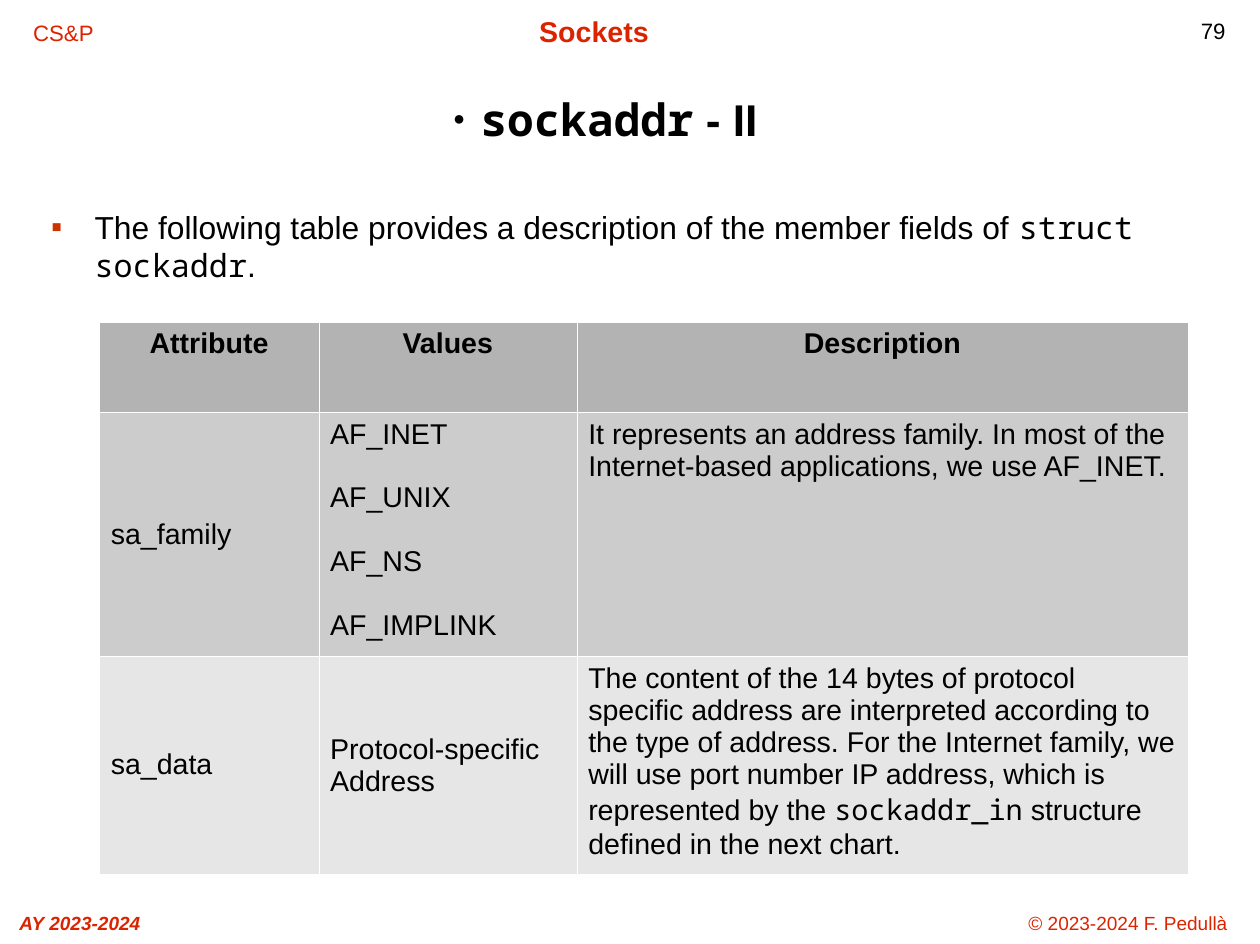
from lxml.etree import SubElement
from pptx import Presentation
from pptx.dml.color import RGBColor
from pptx.enum.text import MSO_ANCHOR as Anchor, PP_ALIGN as Align
from pptx.oxml.ns import qn
from pptx.util import Inches, Pt

SANS, MONO = "Arial", "Noto Sans Mono"
RED, BLACK, WHITE = "DC2300", "000000", "FFFFFF"


def color(value):
    return RGBColor.from_string(value)


class SlideBuilder:
    def __init__(self, slide):
        self.slide = slide

    def add_runs(self, p, runs, size, ink=BLACK, bold=False, italic=False, align=Align.LEFT):
        """Fill a paragraph from (text, font name) pairs."""
        p.alignment = align
        for text, name in runs:
            r = p.add_run()
            r.text = text
            font = r.font
            font.name, font.size, font.bold, font.italic = name, Pt(size), bold, italic
            font.color.rgb = color(ink)

    def bullet(self, p, char, indent, ink, percent=100):
        pPr = p._p.get_or_add_pPr()
        pPr.set("marL", str(Inches(indent)))
        pPr.set("indent", str(-Inches(indent)))
        SubElement(SubElement(pPr, qn("a:buClr")), qn("a:srgbClr"), val=ink)
        SubElement(pPr, qn("a:buSzPct"), val=str(percent * 1000))
        SubElement(pPr, qn("a:buFont"), typeface=SANS)
        SubElement(pPr, qn("a:buChar"), char=char)

    def text(self, box, runs, size, bullet=None, anchor=Anchor.TOP, **style):
        tf = self.slide.shapes.add_textbox(*map(Inches, box)).text_frame
        tf.word_wrap = True
        tf.vertical_anchor = anchor
        p = tf.paragraphs[0]
        if bullet:
            self.bullet(p, *bullet)
        self.add_runs(p, runs, size, **style)

    def borders(self, cell):
        tcPr = cell._tc.get_or_add_tcPr()
        for side in ("lnL", "lnR", "lnT", "lnB"):
            ln = SubElement(tcPr, qn(f"a:{side}"), w=str(Pt(0.06)))
            SubElement(SubElement(ln, qn("a:solidFill")), qn("a:srgbClr"), val=WHITE)

    def cell(self, cell, paragraphs, fill, anchor, **style):
        self.borders(cell)
        cell.fill.solid()
        cell.fill.fore_color.rgb = color(fill)
        cell.vertical_anchor = anchor
        tf = cell.text_frame
        for i, runs in enumerate(paragraphs):
            p = tf.add_paragraph() if i else tf.paragraphs[0]
            if i:
                p.space_before = Pt(20)
            self.add_runs(p, runs, 18, **style)

    def table(self, left, top, widths, heights, rows, fills):
        """Draw rows of (paragraphs, anchor) cells; the first row is the header."""
        box = map(Inches, (left, top, sum(widths), sum(heights)))
        table = self.slide.shapes.add_table(len(heights), len(widths), *box).table
        for column, width in zip(table.columns, widths):
            column.width = Inches(width)
        for i, (row, height, fill) in enumerate(zip(rows, heights, fills)):
            table.rows[i].height = Inches(height)
            style = {} if i else {"bold": True, "align": Align.CENTER}
            for j, (paragraphs, anchor) in enumerate(row):
                self.cell(table.cell(i, j), paragraphs, fill, anchor, **style)


def plain(*lines, anchor=Anchor.TOP):
    """Give a table cell of one sans-serif paragraph per line."""
    return [[(line, SANS)] for line in lines], anchor


HEADER_FOOTER = [
    ((10.25, 0.1, 0.74, 0.39), "79", 14, {"ink": BLACK}),
    ((8.73, 7.93, 2.29, 0.33), "© 2023-2024 F. Pedullà", 12, {}),
    ((0.05, 7.93, 1.3, 0.33), "AY 2023-2024", 12, {"bold": True, "italic": True}),
    ((3.7, 0.07, 3, 0.33), "Sockets", 18, {"bold": True}),
    ((0.13, 0.12, 0.85, 0.33), "CS&P", 14, {}),
]

FIELDS = [
    [plain("Attribute"), plain("Values"), plain("Description")],
    [
        plain("sa_family", anchor=Anchor.MIDDLE),
        plain("AF_INET", "AF_UNIX", "AF_NS", "AF_IMPLINK"),
        plain("It represents an address family. In most of the Internet-based "
              "applications, we use AF_INET."),
    ],
    [
        plain("sa_data", anchor=Anchor.MIDDLE),
        plain("Protocol-specific Address", anchor=Anchor.MIDDLE),
        ([[("The content of the 14 bytes of protocol specific address are interpreted "
            "according to the type of address. For the Internet family, we will use port "
            "number IP address, which is represented by the ", SANS),
           ("sockaddr_in", MONO),
           (" structure defined in the next chart.", SANS)]], Anchor.TOP),
    ],
]


def main():
    prs = Presentation()
    prs.slide_width, prs.slide_height = Inches(11.03), Inches(8.26)
    s = SlideBuilder(prs.slides.add_slide(prs.slide_layouts[6]))
    for box, text, size, style in HEADER_FOOTER:
        s.text(box, [(text, SANS)], size, **{"ink": RED, "align": Align.CENTER, **style})
    s.text((0.43, 0.49, 9.74, 1.1), [("sockaddr", MONO), (" - II", SANS)], 28,
           bullet=("●", 0.24, BLACK, 45), anchor=Anchor.MIDDLE,
           bold=True, align=Align.CENTER)
    s.text((0.35, 1.77, 9.89, 0.9),
           [("The following table provides a description of the member fields of ", SANS),
            ("struct sockaddr", MONO), (".", SANS)], 20,
           bullet=("▪", 0.38, "CC3300"))
    s.table(0.87, 2.82, (1.92, 2.26, 5.35), (0.79, 2.06, 1.84), FIELDS,
            ("B3B3B3", "CCCCCC", "E6E6E6"))
    prs.save("out.pptx")


if __name__ == "__main__":
    main()
